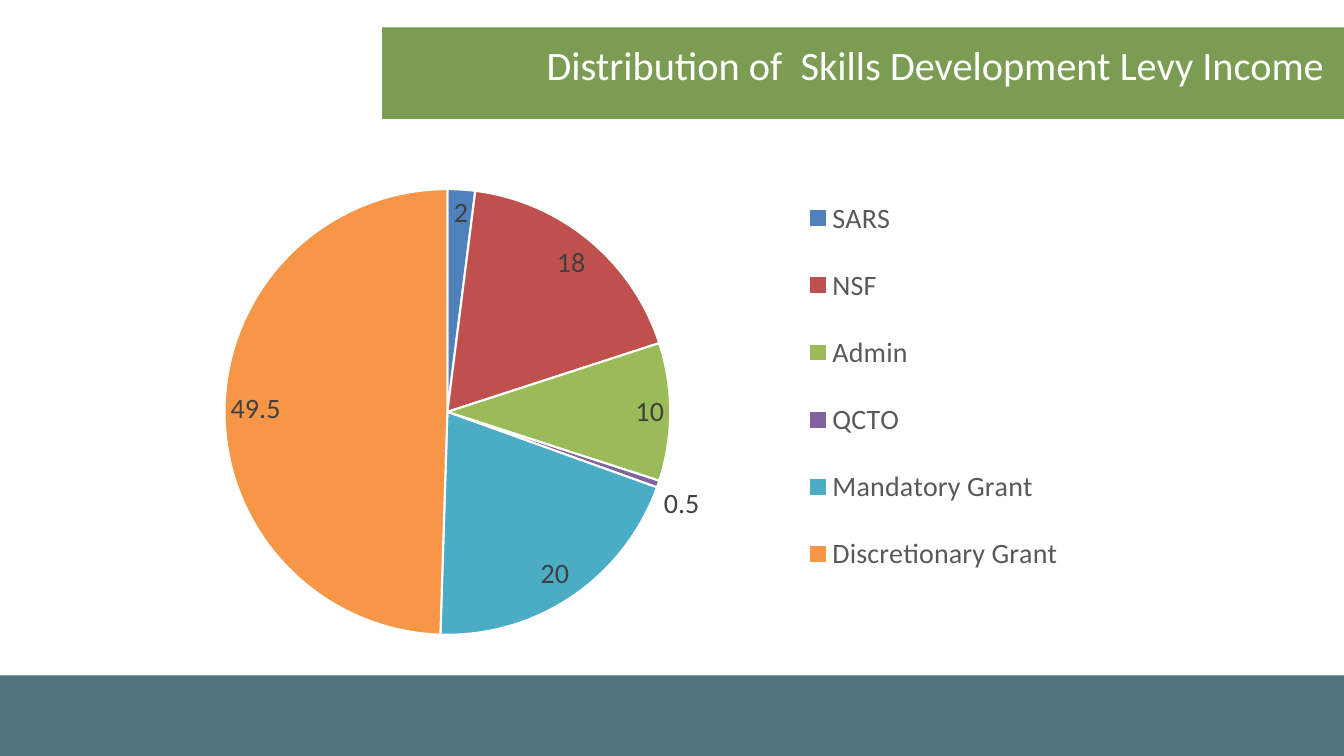
from lxml.etree import SubElement as Sub
from pptx import Presentation as Deck
from pptx.chart.data import CategoryChartData as Data
from pptx.dml.color import RGBColor as Color
from pptx.enum.chart import XL_CHART_TYPE as Kind
from pptx.enum.chart import XL_LABEL_POSITION as Spot
from pptx.enum.chart import XL_LEGEND_POSITION as Side
from pptx.enum.shapes import MSO_SHAPE as Form
from pptx.enum.text import MSO_ANCHOR as Anchor
from pptx.enum.text import PP_ALIGN as Align
from pptx.oxml import parse_xml
from pptx.oxml.ns import qn
from pptx.util import Cm, Pt

FACE = "Calibri"
WIDE, HIGH = 33.87, 19.05
SHARES = [
    ("SARS", 2, "4F81BD"),
    ("NSF", 18, "C0504D"),
    ("Admin", 10, "9BBB59"),
    ("QCTO", 0.5, "8064A2"),
    ("Mandatory Grant", 20, "4BACC6"),
    ("Discretionary Grant", 49.5, "F79646"),
]
SHADE = """<a:effectLst
 xmlns:a="http://schemas.openxmlformats.org/drawingml/2006/main">
 <a:outerShdw blurRad="39370" dist="22860" dir="5400000" rotWithShape="0">
 <a:srgbClr val="000000"><a:alpha val="35000"/></a:srgbClr>
 </a:outerShdw></a:effectLst>"""


def paint(fill, tone):
    fill.solid()
    fill.fore_color.rgb = Color.from_string(tone)


def style(font, size, tone):
    font.name, font.size = FACE, Pt(size)
    paint(font.fill, tone)


def add_bar(slide, box, tone):
    bar = slide.shapes.add_shape(Form.RECTANGLE, *map(Cm, box))
    bar.shadow.inherit = False
    paint(bar.fill, tone)
    bar.line.fill.background()
    return bar


def add_title(slide, box, text):
    frame = slide.shapes.add_textbox(*map(Cm, box)).text_frame
    frame.word_wrap = True
    frame.vertical_anchor = Anchor.TOP
    frame.margin_top = Cm(0.05)
    line = frame.paragraphs[0]
    line.text = text
    line.alignment = Align.RIGHT
    style(line.font, 28.8, "FFFFFF")


def place(layout, x, y, w, h, inner=False):
    """Fix a chart part at fractions of the chart's size."""
    spot = Sub(layout, qn("c:manualLayout"))
    marks = [("xMode", "edge"), ("yMode", "edge"),
             ("x", x), ("y", y), ("w", w), ("h", h)]
    if inner:
        marks.insert(0, ("layoutTarget", "inner"))
    for tag, val in marks:
        Sub(spot, qn("c:" + tag)).set("val", str(val))


def add_pie(slide, box, shares):
    data = Data()
    data.categories = [name for name, _, _ in shares]
    data.add_series("Series 1", [share for _, share, _ in shares])
    chart = slide.shapes.add_chart(Kind.PIE, *map(Cm, box), data).chart
    style(chart.font, 10, "000000")
    chart.has_title = False

    # Slices
    plot = chart.plots[0]
    plot.vary_by_categories = True
    series = plot.series[0]
    for i, (_, _, tone) in enumerate(shares):
        form = series.points[i].format
        paint(form.fill, tone)
        paint(form.line.fill, "FFFFFF")
        form.line.width = Pt(1.5)

    # Values, with the thin slices labelled outside
    labels = series.data_labels
    labels.show_value = True
    labels.position = Spot.INSIDE_END
    style(labels.font, 20, "404040")
    for i, (_, share, _) in enumerate(shares):
        if share < 1:
            label = series.points[i].data_label
            style(label.font, 20, "404040")
            label.position = Spot.OUTSIDE_END

    # Legend
    chart.has_legend = True
    legend = chart.legend
    legend.position = Side.RIGHT
    legend.include_in_layout = False
    style(legend.font, 20, "595959")

    # Layout of pie and legend
    area = chart.element.chart.plotArea
    layout = area.find(qn("c:layout"))
    if layout is None:
        layout = Sub(area, qn("c:layout"))
        area.insert(0, layout)
    place(layout, 0.1, 0.11, 0.48, 0.86, inner=True)
    key = chart.element.chart.find(qn("c:legend"))
    layout = key.find(qn("c:layout"))
    if layout is None:
        layout = Sub(key, qn("c:layout"))
        key.find(qn("c:legendPos")).addnext(layout)
    place(layout, 0.72, 0.07, 0.28, 0.84)


def main():
    deck = Deck()
    deck.slide_width, deck.slide_height = Cm(WIDE), Cm(HIGH)
    slide = deck.slides.add_slide(deck.slide_layouts[6])

    # Footer and title band
    foot = add_bar(slide, (0, 17.02, WIDE, HIGH - 17.02), "4F737F")
    props = foot.element.spPr
    props.replace(props.find(qn("a:effectLst")), parse_xml(SHADE))
    add_bar(slide, (9.63, 0.69, WIDE - 9.63, 2.31), "7B9C52")
    add_title(slide, (2.54, 0.97, 31.09, 2.36),
              "Distribution of  Skills Development Levy Income")

    # Levy shares
    add_pie(slide, (3.2, 3.33, 23.75, 13.06), SHARES)
    deck.save("out.pptx")


if __name__ == "__main__":
    main()
